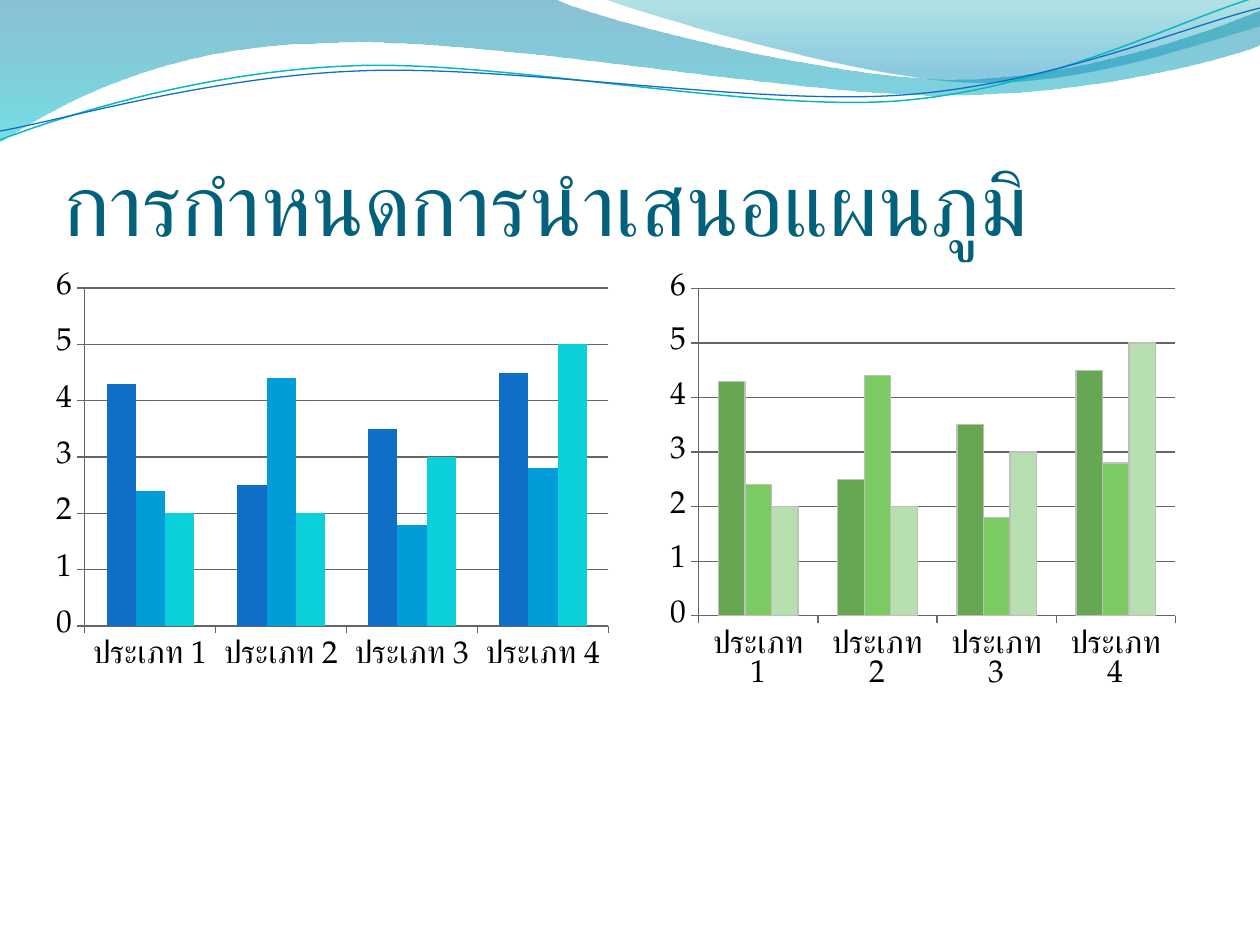
import math

import pptx
import pptx.chart.data
import pptx.dml.color
import pptx.enum.chart
import pptx.enum.text
import pptx.oxml
import pptx.oxml.ns
import pptx.util

RGB = pptx.dml.color.RGBColor
qn = pptx.oxml.ns.qn
PX = 914400 // 126

TITLE_COLOR = RGB(0x04, 0x61, 0x7B)
BLACK = RGB(0, 0, 0)
AXIS_GRAY = RGB(0x66, 0x66, 0x66)
BAR_EDGE = RGB(0xBF, 0xBF, 0xBF)
BLUE = RGB(0x0F, 0x6F, 0xC6)
BLUES = (BLUE, RGB(0x00, 0x9D, 0xD9), RGB(0x0B, 0xD0, 0xD9))
GREENS = (RGB(0x66, 0xA8, 0x52), RGB(0x7C, 0xCB, 0x62), RGB(0xB8, 0xDF, 0xB0))

TITLE = "การกำหนดการนำเสนอแผนภูมิ"
TITLE_BOX = (63, 97, 1134, 157)
CATEGORIES = [f"ประเภท {n}" for n in range(1, 5)]
SERIES = {
    "Series 1": (4.3, 2.5, 3.5, 4.5),
    "Series 2": (2.4, 4.4, 1.8, 2.8),
    "Series 3": (2, 2, 3, 5),
}
CHARTS = [
    ((660, 264, 526, 436), GREENS, BAR_EDGE),
    ((45, 264, 575, 417), BLUES, None),
]

WAVES = [
    ([(0, 0), (554, -1), (600, 21, 837, 79, 955, 79),
      (1075, 79, 1207, 33, 1260, 11), (1261, 45),
      (1239, 55, 1096, 96, 940, 95), (784, 95, 481, 35, 324, 43),
      (163, 45, 58, 105, -1, 142), (0, 0)],
     [(0, RGB(0x00, 0x74, 0xA1), 45), (1, RGB(0x00, 0xC6, 0xCF), 55)]),
    ([(604, -1), (641, 14, 859, 78, 969, 82),
      (1079, 87, 1211, 40, 1260, 26), (1260, 0), (604, -1)],
     [(0, RGB(0x00, 0xA1, 0xA9), 30), (0.8, RGB(0x00, 0x8B, 0xBF), 45)]),
]
RIBBON_TILT = -2.7
RIBBONS = [
    ([(0, 140), (60, 117, 199, 72, 349, 66), (498, 59, 747, 112, 898, 101),
      (1049, 89, 1182, 19, 1257, -3)], (629, 72), RGB(0x0A, 0xB8, 0xBF), 0.85),
    ([(0, 131), (59, 121, 207, 77, 357, 71), (508, 64, 752, 106, 903, 95),
      (1053, 84, 1186, 26, 1260, 8)], (629, 74), BLUE, 0.75),
]


def turn(point, center, degrees):
    a = math.radians(degrees)
    dx, dy = (v - c for v, c in zip(point, center))
    return (center[0] + dx * math.cos(a) - dy * math.sin(a),
            center[1] + dx * math.sin(a) + dy * math.cos(a))


def add_outline(slide, path, close, center=(0, 0), tilt=0):
    points = [turn(pair, center, -tilt)
              for step in path for pair in zip(step[::2], step[1::2])]
    points = [(round(x * PX), round(y * PX)) for x, y in points]
    builder = slide.shapes.build_freeform(*points[0], scale=1.0)
    builder.add_line_segments(points[1:], close=close)
    sp = builder.convert_to_shape()
    sp.shadow.inherit = False
    sp.rotation = tilt
    lines = iter(sp.element.findall(".//" + qn("a:lnTo")))
    for step in path[1:]:
        first = next(lines)
        if len(step) == 6:
            curve = first.makeelement(qn("a:cubicBezTo"), {})
            first.addprevious(curve)
            for line in (first, next(lines), next(lines)):
                curve.append(line[0])
                line.getparent().remove(line)
    return sp


def add_wave(slide, path, stops):
    sp = add_outline(slide, path, True)
    sp.line.fill.background()
    sp.fill.gradient()
    sp.fill.gradient_angle = 270
    for stop, (position, color, opacity) in zip(sp.fill.gradient_stops, stops):
        stop.position = position
        stop.color.rgb = color
    colors = sp.element.spPr.findall(".//" + qn("a:srgbClr"))
    for clr, (position, color, opacity) in zip(colors, stops):
        clr.append(clr.makeelement(qn("a:alpha"), {"val": str(opacity * 1000)}))


def add_ribbon(slide, path, center, color, width):
    sp = add_outline(slide, path, False, center, RIBBON_TILT)
    sp.fill.background()
    sp.line.color.rgb = color
    sp.line.width = pptx.util.Pt(width)


def write_text(tf, text, size, font, color):
    p = tf.paragraphs[0]
    p.alignment = pptx.enum.text.PP_ALIGN.LEFT
    r = p.add_run()
    r.text = text
    r.font.size = pptx.util.Pt(size)
    r.font.name = font
    r.font.color.rgb = color
    rPr = r.font._element
    rPr.append(rPr.makeelement(qn("a:cs"), {"typeface": font}))


def place_title(slide):
    sp = slide.shapes.title
    sp.element.getparent().append(sp.element)
    sp.left, sp.top, sp.width, sp.height = (v * PX for v in TITLE_BOX)
    tf = sp.text_frame
    tf.word_wrap = True
    tf.auto_size = pptx.enum.text.MSO_AUTO_SIZE.NONE
    tf.vertical_anchor = pptx.enum.text.MSO_ANCHOR.BOTTOM
    tf.margin_left = tf.margin_right = tf.margin_bottom = 0
    tf.margin_top = pptx.util.Inches(0.05)
    write_text(tf, TITLE, size=50, font="Arial", color=TITLE_COLOR)


def add_bar_chart(slide, box, colors, edge):
    data = pptx.chart.data.CategoryChartData()
    data.categories = CATEGORIES
    for name, values in SERIES.items():
        data.add_series(name, values)
    kind = pptx.enum.chart.XL_CHART_TYPE.COLUMN_CLUSTERED
    chart = slide.shapes.add_chart(kind, *(v * PX for v in box), data).chart
    chart.has_legend = False
    chart.has_title = False
    chart.font.size = pptx.util.Pt(18)
    chart.font.name = "TeX Gyre Pagella"
    chart.font.color.rgb = BLACK
    value_axis = chart.value_axis
    value_axis.minimum_scale = 0
    value_axis.maximum_scale = 6
    value_axis.major_unit = 1
    value_axis.has_major_gridlines = True
    for axis in (chart.category_axis, value_axis):
        axis.major_tick_mark = pptx.enum.chart.XL_TICK_MARK.OUTSIDE
    for part in (chart.category_axis, value_axis, value_axis.major_gridlines):
        part.format.line.color.rgb = AXIS_GRAY
        part.format.line.width = pptx.util.Pt(0.75)
    plot = chart.plots[0]
    plot.vary_by_categories = False
    plot.gap_width = 150
    plot.overlap = 0
    for series, color in zip(plot.series, colors):
        series.format.fill.solid()
        series.format.fill.fore_color.rgb = color
        if edge is None:
            series.format.line.fill.background()
        else:
            series.format.line.color.rgb = edge
            series.format.line.width = pptx.util.Pt(0.75)


def main():
    prs = pptx.Presentation()
    prs.slide_width = pptx.util.Inches(10)
    prs.slide_height = pptx.util.Inches(7.5)
    slide = prs.slides.add_slide(prs.slide_layouts[5])
    for path, stops in WAVES:
        add_wave(slide, path, stops)
    for path, center, color, width in RIBBONS:
        add_ribbon(slide, path, center, color, width)
    place_title(slide)
    for box, colors, edge in CHARTS:
        add_bar_chart(slide, box, colors, edge)
    prs.save("out.pptx")


if __name__ == "__main__":
    main()
